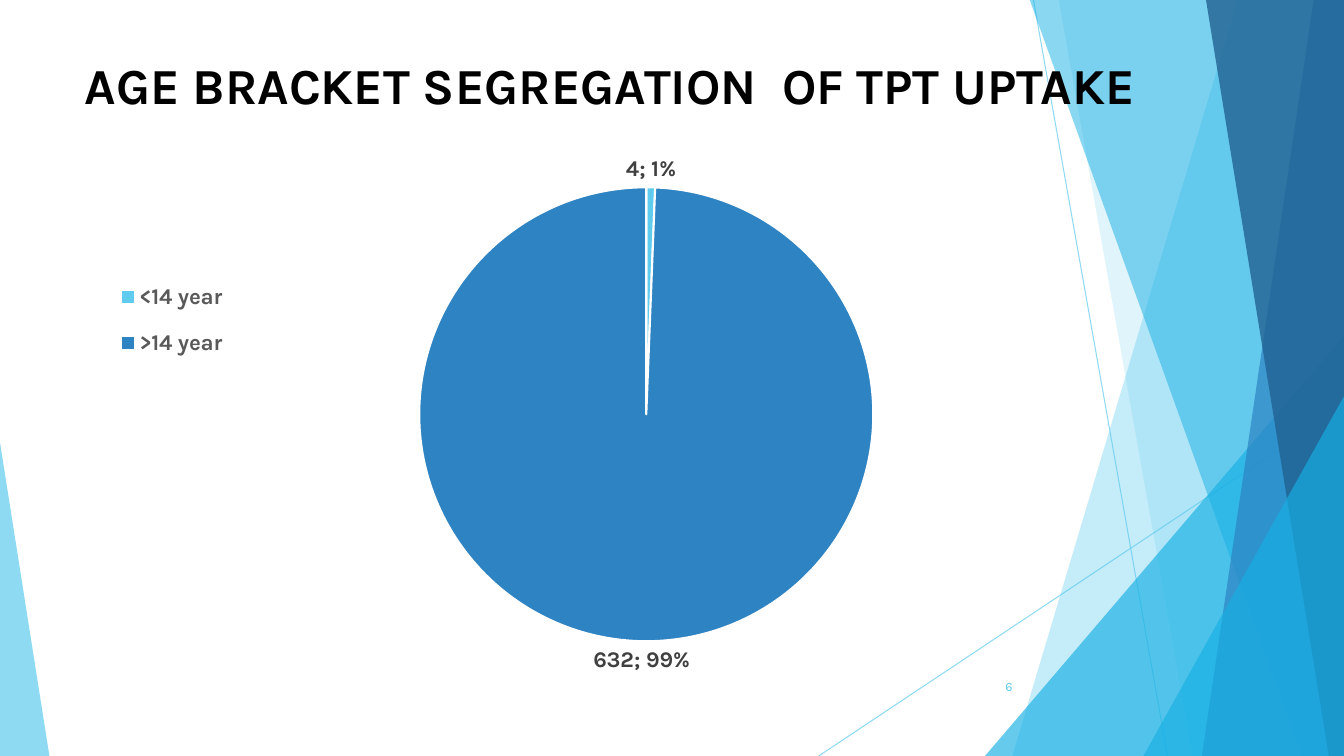
"""Build the slide on TPT uptake by age bracket, with a pie chart over layered facets."""
from dataclasses import dataclass

import pptx
import pptx.chart.data
import pptx.dml.color
import pptx.enum.chart
import pptx.enum.shapes
import pptx.enum.text
import pptx.oxml
import pptx.oxml.ns
import pptx.util
from pptx.util import Inches

FONT = "Karla"
WIDTH, HEIGHT = 13.33, 7.5
COLORS = {
    "sky": "5FCBEF",
    "cyan": "17B0E4",
    "blue": "2E83C3",
    "navy": "226292",
    "title": "000000",
    "label": "404040",
    "legend": "595959",
    "white": "FFFFFF",
}


@dataclass(frozen=True)
class Ray:
    start: tuple[float, float]
    end: tuple[float, float]


@dataclass(frozen=True)
class Facet:
    """A band from a slanted left edge to the right side of the slide."""
    top_x: float
    bottom_x: float
    color: str
    alpha: int


@dataclass(frozen=True)
class Corner:
    """A triangle standing on the bottom edge of the slide."""
    left: float
    top: float
    width: float
    apex: float
    color: str
    alpha: int


@dataclass(frozen=True)
class Label:
    text: str
    box: tuple[float, float, float, float]
    size: int
    color: str
    bold: bool
    align: pptx.enum.text.PP_ALIGN


RAYS = [Ray((10.25, 0), (11.58, HEIGHT)), Ray((WIDTH, 4.03), (8.12, HEIGHT))]
DECORATION = [
    Facet(12.28, 10.04, "sky", 36),
    Facet(10.5, 11.83, "sky", 20),
    Corner(9.77, 3.33, 3.56, 1, "cyan", 66),
    Facet(10.21, 12.91, "cyan", 50),
    Facet(13.03, 11.92, "blue", 70),
    Facet(11.96, 13.18, "navy", 80),
    Corner(11.34, 3.93, 1.99, 1, "cyan", 66),
    Corner(0, 4.39, 0.49, 0, "sky", 70),
]
LABELS = [
    Label("AGE BRACKET SEGREGATION  OF TPT UPTAKE", (0.74, 0.49, 11.23, 0.7),
          36, "title", True, pptx.enum.text.PP_ALIGN.LEFT),
    Label("6", (9.39, 6.61, 0.75, 0.4), 9, "sky", False, pptx.enum.text.PP_ALIGN.RIGHT),
]
AGE_COUNTS = {"<14 year": (4, "sky"), ">14 year": (632, "blue")}


def rgb(name: str) -> pptx.dml.color.RGBColor:
    return pptx.dml.color.RGBColor.from_string(COLORS[name])


def set_alpha(element, percent: int) -> None:
    color = element.find(".//" + pptx.oxml.ns.qn("a:srgbClr"))
    alpha = color.makeelement(pptx.oxml.ns.qn("a:alpha"), {"val": str(percent * 1000)})
    color.append(alpha)


def style_font(font, size: int, color: str, bold: bool) -> None:
    font.name = FONT
    font.size = pptx.util.Pt(size)
    font.bold = bold
    font.color.rgb = rgb(color)


def draw_ray(s, ray: Ray) -> None:
    line = s.shapes.add_connector(
        pptx.enum.shapes.MSO_CONNECTOR.STRAIGHT,
        *(Inches(v) for v in ray.start + ray.end))
    line.line.color.rgb = rgb("sky")
    line.line.width = pptx.util.Pt(0.75)
    props = line._element.spPr
    set_alpha(props, 70)
    props.append(props.makeelement(pptx.oxml.ns.qn("a:effectLst"), {}))


def draw_decoration(s, item: Facet | Corner) -> None:
    if isinstance(item, Facet):
        top = Inches(-0.01)
        right, bottom = Inches(WIDTH), Inches(HEIGHT)
        builder = s.shapes.build_freeform(Inches(item.top_x), top)
        builder.add_line_segments(
            [(right, top), (right, bottom), (Inches(item.bottom_x), bottom)], close=True)
        sp = builder.convert_to_shape()
    else:
        sp = s.shapes.add_shape(
            pptx.enum.shapes.MSO_SHAPE.ISOSCELES_TRIANGLE, Inches(item.left),
            Inches(item.top), Inches(item.width), Inches(HEIGHT - item.top))
        sp.adjustments[0] = item.apex
    sp.shadow.inherit = False
    sp.line.fill.background()
    sp.fill.solid()
    sp.fill.fore_color.rgb = rgb(item.color)
    set_alpha(sp._element.spPr, item.alpha)


def draw_label(s, label: Label) -> None:
    tf = s.shapes.add_textbox(*(Inches(v) for v in label.box)).text_frame
    tf.word_wrap = True
    tf.vertical_anchor = pptx.enum.text.MSO_ANCHOR.MIDDLE
    p = tf.paragraphs[0]
    p.text = label.text
    p.alignment = label.align
    style_font(p.runs[0].font, label.size, label.color, label.bold)


def make_layout(x: float, y: float, w: float, h: float, target: str = ""):
    """Return a manual chart layout given in fractions of the chart area."""
    return pptx.oxml.parse_xml(
        f'<c:layout {pptx.oxml.ns.nsdecls("c")}><c:manualLayout>{target}'
        '<c:xMode val="edge"/><c:yMode val="edge"/>'
        f'<c:x val="{x}"/><c:y val="{y}"/><c:w val="{w}"/><c:h val="{h}"/>'
        '</c:manualLayout></c:layout>')


def draw_chart(s) -> None:
    data = pptx.chart.data.CategoryChartData()
    data.categories = list(AGE_COUNTS)
    data.add_series("Series 1", [count for count, _ in AGE_COUNTS.values()])
    chart = s.shapes.add_chart(
        pptx.enum.chart.XL_CHART_TYPE.PIE, Inches(0.74), Inches(1.39),
        Inches(11.34), Inches(5.85), data).chart
    chart.has_title = False
    style_font(chart.font, 10, "title", False)

    chart.has_legend = True
    chart.legend.position = pptx.enum.chart.XL_LEGEND_POSITION.BOTTOM
    chart.legend.include_in_layout = False
    style_font(chart.legend.font, 16, "legend", True)

    plot = chart.plots[0]
    plot.vary_by_categories = True
    for i, (_, color) in enumerate(AGE_COUNTS.values()):
        fmt = plot.series[0].points[i].format
        fmt.fill.solid()
        fmt.fill.fore_color.rgb = rgb(color)
        fmt.line.color.rgb = rgb("white")
        fmt.line.width = pptx.util.Pt(1.5)

    labels = plot.series[0].data_labels
    labels.show_value = True
    labels.show_percentage = True
    labels.position = pptx.enum.chart.XL_LABEL_POSITION.OUTSIDE_END
    style_font(labels.font, 16, "label", True)
    separator = pptx.oxml.parse_xml(
        f'<c:separator {pptx.oxml.ns.nsdecls("c")}>; </c:separator>')
    labels._element.find(pptx.oxml.ns.qn("c:showBubbleSize")).addnext(separator)

    area = chart._chartSpace.find(".//" + pptx.oxml.ns.qn("c:plotArea"))
    for old in area.findall(pptx.oxml.ns.qn("c:layout")):
        area.remove(old)
    area.insert(0, make_layout(0.3, 0.08, 0.4, 0.77, '<c:layoutTarget val="inner"/>'))
    legend = chart.legend._element
    for old in legend.findall(pptx.oxml.ns.qn("c:layout")):
        legend.remove(old)
    legend.find(pptx.oxml.ns.qn("c:legendPos")).addnext(make_layout(0.03, 0.21, 0.11, 0.19))


def main() -> None:
    prs = pptx.Presentation()
    prs.slide_width, prs.slide_height = Inches(WIDTH), Inches(HEIGHT)
    s = prs.slides.add_slide(prs.slide_layouts[6])
    for ray in RAYS:
        draw_ray(s, ray)
    for item in DECORATION:
        draw_decoration(s, item)
    for label in LABELS:
        draw_label(s, label)
    draw_chart(s)
    prs.save("out.pptx")


if __name__ == "__main__":
    main()
